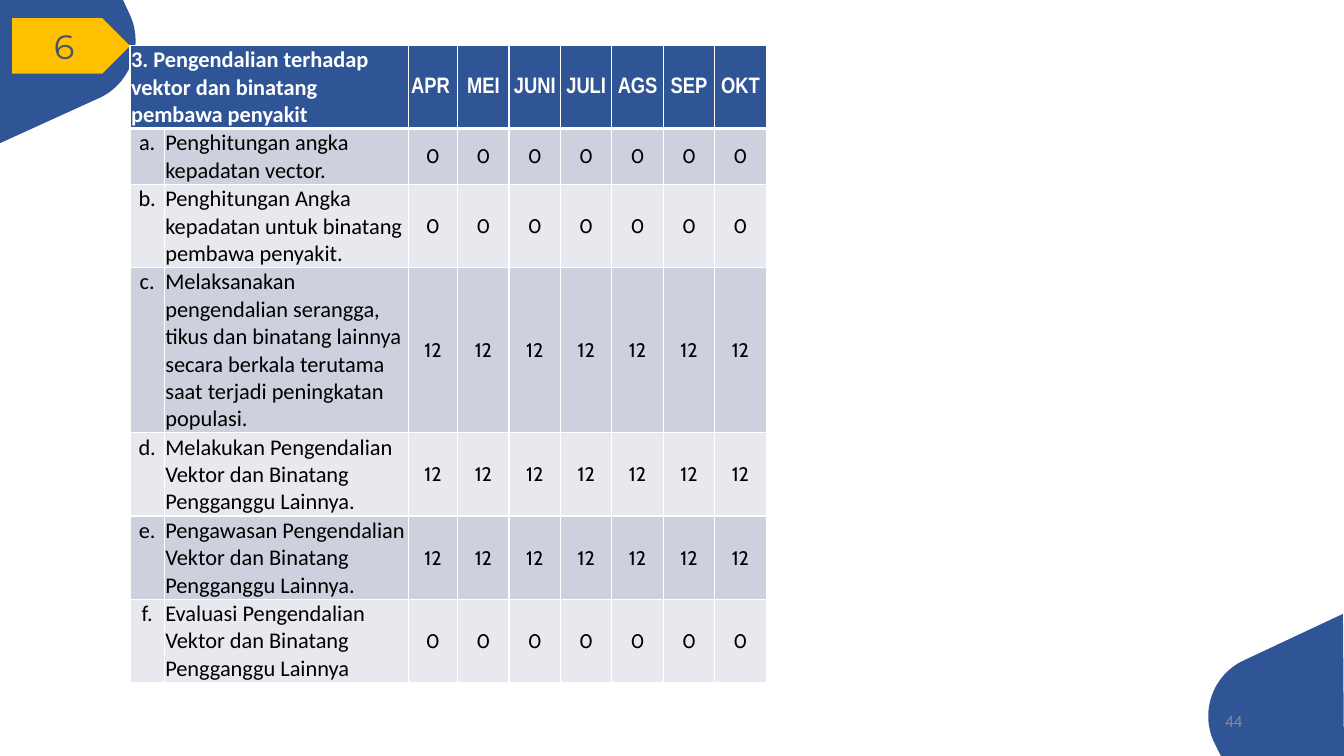
from lxml import etree
from pptx import Presentation
from pptx import util as u
from pptx.dml.color import RGBColor
from pptx.enum import shapes, text
from pptx.oxml.ns import qn

# Content
TITLE = "3. Pengendalian terhadap vektor dan binatang pembawa penyakit"
MONTHS = ["APR ", "MEI", "JUNI", "JULI", "AGS", "SEP", "OKT"]
# activity, value for every month, row height
ACTIVITIES = [
    ("Penghitungan angka kepadatan vector.", 0, 0.41),
    ("Penghitungan Angka kepadatan untuk binatang pembawa penyakit.", 0, 0.75),
    ("Melaksanakan pengendalian serangga, tikus dan binatang lainnya secara "
     "berkala terutama saat terjadi peningkatan populasi.", 12, 1.05),
    ("Melakukan Pengendalian Vektor dan Binatang Pengganggu Lainnya.", 12, 0.75),
    ("Pengawasan Pengendalian Vektor dan Binatang Pengganggu Lainnya.", 12, 0.75),
    ("Evaluasi Pengendalian Vektor dan Binatang Pengganggu Lainnya", 0, 0.71),
]
SECTION, PAGE = "6", "44"

# Format
COLORS = {"blue": "2F5597", "gold": "FFC000", "slate": "44546A", "white": "FFFFFF",
          "black": "000000", "gray": "8C8C8C", "odd": "CDD1DD", "even": "E8E9EF"}
W, H = 13.33, 7.5
HEADER_H = 0.59
COLS = [0.34, 2.42, 0.49] + [0.51] * (len(MONTHS) - 1)
LEFT, CENTER, RIGHT = text.PP_ALIGN.LEFT, text.PP_ALIGN.CENTER, text.PP_ALIGN.RIGHT
TOP, MIDDLE, BOTTOM = (text.MSO_ANCHOR.TOP, text.MSO_ANCHOR.MIDDLE,
                       text.MSO_ANCHOR.BOTTOM)
STYLES = {
    "title": ("Calibri", 16, True, "white", LEFT, BOTTOM),
    "month": ("Arial Narrow", 16, True, "white", CENTER, MIDDLE),
    "letter": ("Calibri", 16, False, "black", CENTER, TOP),
    "activity": ("Calibri", 16, False, "black", LEFT, TOP),
    "value": ("Cabin", 14, False, "black", CENTER, MIDDLE),
    "section": ("Montserrat", 24.1, False, "slate", CENTER, MIDDLE),
    "page": ("Calibri", 12, False, "gray", RIGHT, MIDDLE),
}
# Corner outlines: points are line ends, groups of three points are curves
CORNERS = [
    [(13.33, 7.5), (12.11, 7.5), (12.04, 7.36),
     ((11.9, 7.06), (12.03, 6.69), (12.34, 6.55)), (13.32, 6.09)],
    [(0, 0), (1.22, 0), (1.29, 0.15),
     ((1.43, 0.46), (1.29, 0.83), (0.99, 0.97)), (0, 1.42)],
]
CURVE_STEPS = 24


def rgb(name):
    return RGBColor.from_string(COLORS[name])


def paint(sp, color):
    sp.shadow.inherit = False
    sp.fill.solid()
    sp.fill.fore_color.rgb = rgb(color)
    sp.line.fill.background()


def write(tf, words, style):
    font, size, bold, color, align, _ = STYLES[style]
    p = tf.paragraphs[0]
    p.alignment = align
    r = p.add_run()
    r.text = words
    for key, value in {"name": font, "size": u.Pt(size), "bold": bold}.items():
        setattr(r.font, key, value)
    r.font.color.rgb = rgb(color)


def outline(parts):
    points = []
    for part in parts:
        if not isinstance(part[0], tuple):
            points.append(part)
            continue
        a, (b, c, d) = points[-1], part
        for i in range(1, CURVE_STEPS + 1):
            t = i / CURVE_STEPS
            s = 1 - t
            points.append(tuple(
                s**3 * a[k] + 3 * s * s * t * b[k] + 3 * s * t * t * c[k] + t**3 * d[k]
                for k in (0, 1)))
    return points


def border(cell, widths):
    tc_pr = cell._tc.get_or_add_tcPr()
    for side, width in zip("LRTB", widths):
        ln = etree.SubElement(tc_pr, qn(f"a:ln{side}"), w=str(u.Pt(width)))
        fill = etree.SubElement(ln, qn("a:solidFill"))
        etree.SubElement(fill, qn("a:srgbClr"), val=COLORS["white"])


def fill_cell(cell, words, style, color, widths):
    border(cell, widths)
    cell.fill.solid()
    cell.fill.fore_color.rgb = rgb(color)
    inset = u.Inches(0.01)
    for key, value in {"margin_left": inset, "margin_right": inset, "margin_top": inset,
                       "margin_bottom": 0, "vertical_anchor": STYLES[style][5]}.items():
        setattr(cell, key, value)
    if words:
        write(cell.text_frame, words, style)


prs = Presentation()
prs.slide_width, prs.slide_height = u.Inches(W), u.Inches(H)
sh = prs.slides.add_slide(prs.slide_layouts[6]).shapes

# Corner decorations
for corner in CORNERS:
    start, *rest = outline(corner)
    fb = sh.build_freeform(u.Inches(start[0]), u.Inches(start[1]))
    fb.add_line_segments([(u.Inches(x), u.Inches(y)) for x, y in rest], close=True)
    paint(fb.convert_to_shape(), "blue")

# Section tag
tag = sh.add_shape(shapes.MSO_SHAPE.PENTAGON, *map(u.Inches, (0.12, 0.18, 1.17, 0.55)))
paint(tag, "gold")
tag.text_frame.vertical_anchor = MIDDLE
write(tag.text_frame, SECTION, "section")

# Schedule table
heights = [HEADER_H] + [height for *_, height in ACTIVITIES]
tbl = sh.add_table(len(heights), len(COLS), u.Inches(1.29), u.Inches(0.45),
                   u.Inches(sum(COLS)), u.Inches(sum(heights))).table
for col, width in zip(tbl.columns, COLS):
    col.width = u.Inches(width)
for row, height in zip(tbl.rows, heights):
    row.height = u.Inches(height)

styles = ["letter", "activity"] + ["value"] * len(MONTHS)
tbl.cell(0, 0).merge(tbl.cell(0, 1))
for c, words in enumerate([TITLE, ""] + MONTHS):
    fill_cell(tbl.cell(0, c), words, "title" if c < 2 else "month", "blue", (1, 1, 1, 3))
for n, (activity, value, _) in enumerate(ACTIVITIES, 1):
    entries = [f"{'abcdef'[n - 1]}.", activity] + [str(value)] * len(MONTHS)
    for c, (words, style) in enumerate(zip(entries, styles)):
        fill_cell(tbl.cell(n, c), words, style, "odd" if n % 2 else "even",
                  (1, 1, 3 if n == 1 else 1, 1))

# Page number
page = sh.add_textbox(*map(u.Inches, (9.42, 6.95, 3, 0.4))).text_frame
page.word_wrap = True
page.vertical_anchor = MIDDLE
write(page, PAGE, "page")

prs.save("out.pptx")
